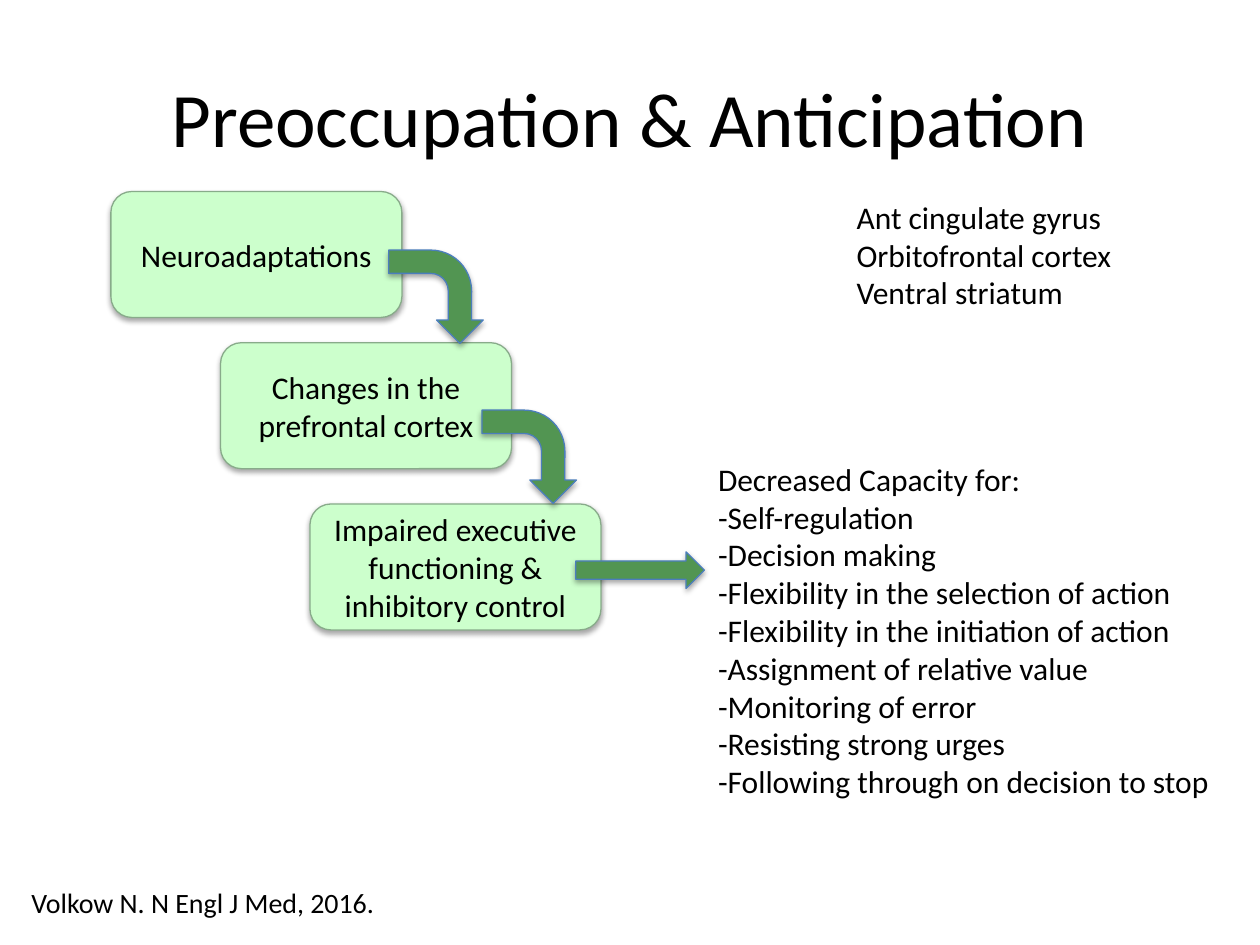
from lxml import etree
from pptx import Presentation
from pptx import util as u
from pptx.dml.color import RGBColor
from pptx.enum import shapes, text
from pptx.oxml import parse_xml
from pptx.oxml.ns import nsdecls, qn

BLACK = RGBColor(0x00, 0x00, 0x00)
MINT = RGBColor(0xCC, 0xFF, 0xCC)
SAGE = RGBColor(0x88, 0xAB, 0x8A)
GREEN = RGBColor(0x52, 0x95, 0x52)
BLUE = RGBColor(0x4B, 0x7E, 0xBC)

STEPS = [
    (0.88, 1.52, "Neuroadaptations"),
    (1.75, 2.72, "Changes in the prefrontal cortex"),
    (2.46, 4, "Impaired executive functioning & inhibitory control"),
]
BENDS = [(3.09, 1.98), (3.83, 3.25)]
REGIONS = ["Ant cingulate gyrus", "Orbitofrontal cortex", "Ventral striatum"]
CAPACITIES = [
    "Decreased Capacity for:",
    "-Self-regulation",
    "-Decision making",
    "-Flexibility in the selection of action",
    "-Flexibility in the initiation of action",
    "-Assignment of relative value",
    "-Monitoring of error",
    "-Resisting strong urges",
    "-Following through on decision to stop",
]


def place(sp, box):
    sp.left, sp.top, sp.width, sp.height = (u.Inches(v) for v in box)


def write(tf, lines, size=18, align=text.PP_ALIGN.LEFT):
    for i, line in enumerate(lines):
        p = tf.add_paragraph() if i else tf.paragraphs[0]
        p.alignment = align
        r = p.add_run()
        r.text = line
        r.font.name = "Calibri"
        r.font.size = u.Pt(size)
        r.font.color.rgb = BLACK


def add_shadow(sp):
    """Give the shape a soft shadow just below it."""
    sp.shadow.inherit = False
    effects = sp._element.spPr.find(qn("a:effectLst"))
    effects.append(parse_xml(
        f'<a:outerShdw {nsdecls("a")} blurRad="40000" dist="23000" dir="5400000" rotWithShape="0">'
        '<a:srgbClr val="000000"><a:alpha val="35000"/></a:srgbClr></a:outerShdw>'))


def add_block(s, kind, box, fill, line, rotation=0):
    sp = s.shapes.add_shape(kind, *(u.Inches(v) for v in box))
    sp.rotation = rotation
    sp.fill.solid()
    sp.fill.fore_color.rgb = fill
    sp.line.color.rgb = line
    sp.line.width = u.Pt(0.75)
    add_shadow(sp)
    return sp


def add_step(s, left, top, label):
    sp = add_block(s, shapes.MSO_SHAPE.ROUNDED_RECTANGLE, (left, top, 2.31, 1), MINT, SAGE)
    tf = sp.text_frame
    tf.word_wrap = True
    tf.vertical_anchor = text.MSO_ANCHOR.MIDDLE
    write(tf, [label], align=text.PP_ALIGN.CENTER)


def add_text(s, box, lines, size=18):
    tf = s.shapes.add_textbox(*(u.Inches(v) for v in box)).text_frame
    tf.word_wrap = False
    tf.auto_size = text.MSO_AUTO_SIZE.SHAPE_TO_FIT_TEXT
    write(tf, lines, size)


def main():
    prs = Presentation()
    prs.slide_width, prs.slide_height = u.Inches(10), u.Inches(7.5)
    s = prs.slides.add_slide(prs.slide_layouts[5])

    title = s.shapes.title
    place(title, (0.5, 0.3, 9, 1.25))
    title.text_frame.vertical_anchor = text.MSO_ANCHOR.MIDDLE
    write(title.text_frame, ["Preoccupation & Anticipation"], 44, text.PP_ALIGN.CENTER)

    for step in STEPS:
        add_step(s, *step)
    add_text(s, (5.6, 3.6, 4.15, 2.83), CAPACITIES)
    for left, top in BENDS:
        add_block(s, shapes.MSO_SHAPE.BENT_ARROW, (left, top, 0.74, 0.75), GREEN, BLUE, 90)
    add_block(s, shapes.MSO_SHAPE.RIGHT_ARROW, (4.57, 4.38, 1.02, 0.29), GREEN, BLUE)
    add_text(s, (0.15, 6.98, 2.98, 0.37), ["Volkow N. N Engl J Med, 2016."], 16)
    add_text(s, (6.7, 1.52, 2.26, 1.01), REGIONS)

    prs.save("out.pptx")


if __name__ == "__main__":
    main()
